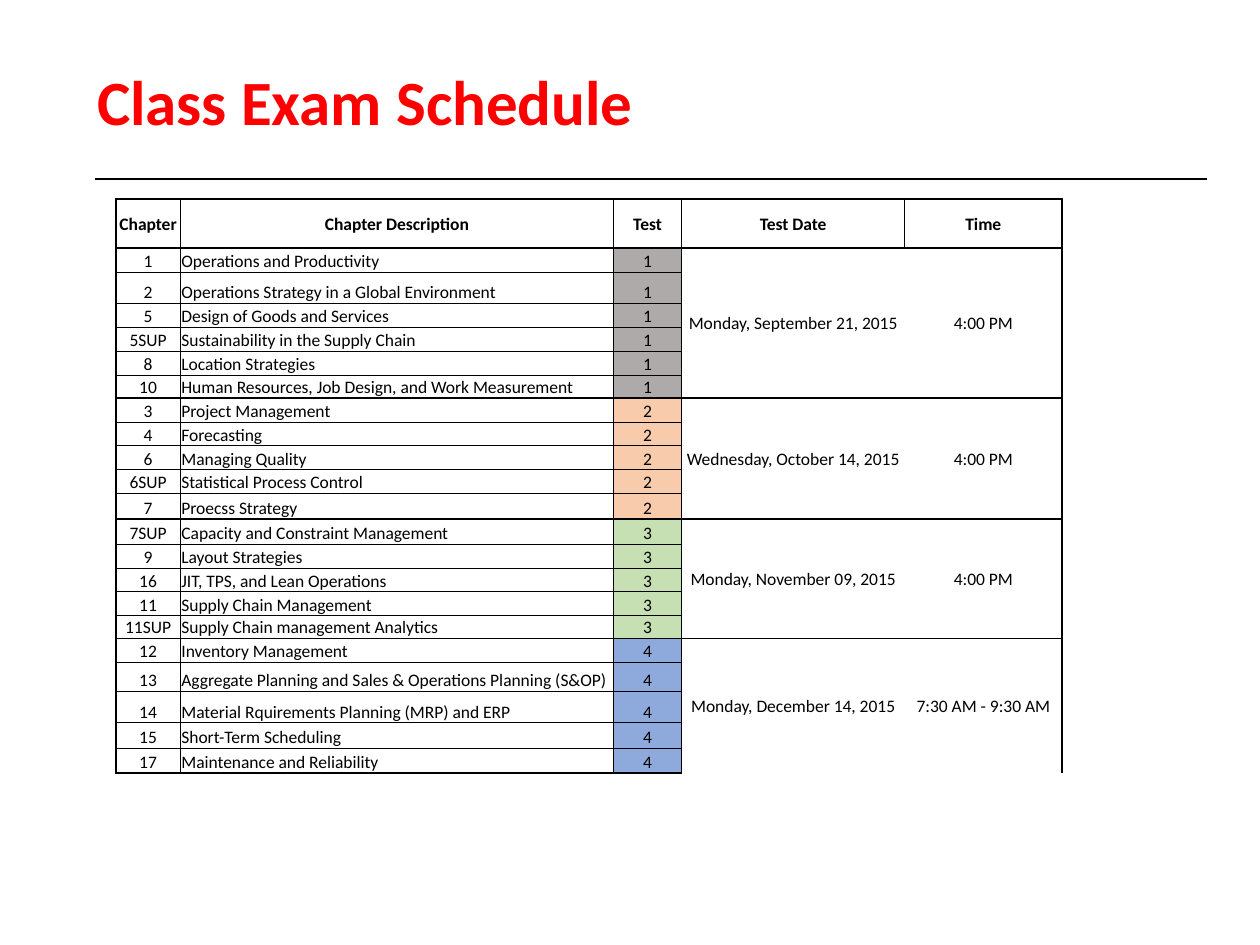
from lxml import etree
from pptx import Presentation
from pptx.dml.color import RGBColor
from pptx.enum.shapes import MSO_CONNECTOR
from pptx.enum.text import MSO_ANCHOR, PP_ALIGN
from pptx.oxml.ns import qn
from pptx.util import Inches, Pt

LEFT, CENTER = PP_ALIGN.LEFT, PP_ALIGN.CENTER
MIDDLE, BOTTOM = MSO_ANCHOR.MIDDLE, MSO_ANCHOR.BOTTOM
BLACK = RGBColor(0x00, 0x00, 0x00)
RED = RGBColor(0xFF, 0x00, 0x00)
GRAY = RGBColor(0xAE, 0xAA, 0xAA)
ORANGE = RGBColor(0xF8, 0xCB, 0xAD)
GREEN = RGBColor(0xC6, 0xE0, 0xB4)
BLUE = RGBColor(0x8E, 0xA9, 0xDB)

TITLE = "Class Exam Schedule"
HEADER = ["Chapter", "Chapter Description", "Test", "Test Date", "Time"]
# Each test: date, time, colour, then (chapter, description, row height)
TESTS = [
    ("Monday, September 21, 2015", "4:00 PM", GRAY, [
        ("1", "Operations and Productivity", 0.19),
        ("2", "Operations Strategy in a Global Environment", 0.25),
        ("5", "Design of Goods and Services", 0.19),
        ("5SUP", "Sustainability in the Supply Chain", 0.19),
        ("8", "Location Strategies", 0.19),
        ("10", "Human Resources, Job Design, and Work Measurement", 0.18),
    ]),
    ("Wednesday, October 14, 2015", "4:00 PM", ORANGE, [
        ("3", "Project Management", 0.19),
        ("4", "Forecasting", 0.19),
        ("6", "Managing Quality", 0.19),
        ("6SUP", "Statistical Process Control", 0.19),
        ("7", "Proecss Strategy", 0.2),
    ]),
    ("Monday, November 09, 2015", "4:00 PM", GREEN, [
        ("7SUP", "Capacity and Constraint Management", 0.2),
        ("9", "Layout Strategies", 0.19),
        ("16", "JIT, TPS, and Lean Operations", 0.19),
        ("11", "Supply Chain Management", 0.19),
        ("11SUP", "Supply Chain management Analytics", 0.18),
    ]),
    ("Monday, December 14, 2015", "7:30 AM - 9:30 AM", BLUE, [
        ("12", "Inventory Management", 0.19),
        ("13", "Aggregate Planning and Sales & Operations Planning (S&OP)", 0.23),
        ("14", "Material Rquirements Planning (MRP) and ERP", 0.25),
        ("15", "Short-Term Scheduling", 0.2),
        ("17", "Maintenance and Reliability", 0.2),
    ]),
]
WIDTHS = [0.51, 3.44, 0.54, 1.77, 1.25]
HEAD_HEIGHT = 0.39
MARGINS = {"margin_left": 0.01, "margin_right": 0.01,
           "margin_top": 0.01, "margin_bottom": 0}
# Vertical rule widths in points, from the left edge to the right edge
HEAD_RULES = [1, 0.5, 0.5, 1, 1, 1]
BODY_RULES = [1, 0.5, 1, 1, 0, 1]


def set_font(font, **values):
    color = values.pop("color", BLACK)
    for key, value in values.items():
        setattr(font, key, value)
    font.color.rgb = color


def set_borders(cell, left, right, top, bottom):
    """Draw the four cell edges; a width of 0 means no line."""
    props = cell._tc.get_or_add_tcPr()
    for spot, (side, width) in enumerate(zip("LRTB", (left, right, top, bottom))):
        edge = etree.Element(qn(f"a:ln{side}"), w=str(int(Pt(width))))
        props.insert(spot, edge)
        if width:
            fill = etree.SubElement(edge, qn("a:solidFill"))
            etree.SubElement(fill, qn("a:srgbClr"), val=str(BLACK))
        else:
            etree.SubElement(edge, qn("a:noFill"))


def fill_cell(cell, text, align=CENTER, anchor=MIDDLE, bold=False):
    cell.vertical_anchor = anchor
    for key, value in MARGINS.items():
        setattr(cell, key, Inches(value))
    para = cell.text_frame.paragraphs[0]
    para.alignment = align
    run = para.add_run()
    run.text = text
    set_font(run.font, name="Calibri", size=Pt(10), bold=bold)


def style_row(table, row, rules, top, bottom, color=None):
    for col in range(len(WIDTHS)):
        cell = table.cell(row, col)
        if color and col == 2:
            cell.fill.solid()
            cell.fill.fore_color.rgb = color
        else:
            cell.fill.background()
        joined = color and col > 2
        set_borders(cell, rules[col], rules[col + 1],
                    0 if joined and top < 1 else top,
                    0 if joined and bottom < 1 else bottom)


def add_schedule(slide):
    heights = [HEAD_HEIGHT] + [item[2] for test in TESTS for item in test[3]]
    table = slide.shapes.add_table(
        len(heights), len(WIDTHS), Inches(0.92), Inches(1.58),
        Inches(sum(WIDTHS)), Inches(sum(heights))).table
    table.first_row = table.horz_banding = False
    for column, width in zip(table.columns, WIDTHS):
        column.width = Inches(width)
    for line, height in zip(table.rows, heights):
        line.height = Inches(height)

    for col, text in enumerate(HEADER):
        fill_cell(table.cell(0, col), text, bold=True)
    style_row(table, 0, HEAD_RULES, 1, 1)

    row = 1
    for number, (date, time, color, items) in enumerate(TESTS, 1):
        first, last = row, row + len(items) - 1
        for chapter, topic, _ in items:
            fill_cell(table.cell(row, 0), chapter, anchor=BOTTOM)
            fill_cell(table.cell(row, 1), topic, LEFT, BOTTOM)
            fill_cell(table.cell(row, 2), str(number), anchor=BOTTOM)
            style_row(table, row, BODY_RULES, 1 if row == first else 0.5,
                      1 if row == last else 0.5, color)
            row += 1
        for col, text in ((3, date), (4, time)):
            table.cell(first, col).merge(table.cell(last, col))
            fill_cell(table.cell(first, col), text)


def add_title(slide):
    title = slide.shapes.title
    title.left, title.top = Inches(0.67), Inches(0.47)
    title.width, title.height = Inches(8.5), Inches(0.67)
    title.text_frame.vertical_anchor = BOTTOM
    para = title.text_frame.paragraphs[0]
    para.alignment, para.line_spacing = LEFT, 0.8
    run = para.add_run()
    run.text = TITLE
    set_font(run.font, name="Calibri", size=Pt(36), bold=True, color=RED)


def add_rule(slide):
    rule = slide.shapes.add_connector(
        MSO_CONNECTOR.STRAIGHT, Inches(0.75), Inches(1.42), Inches(9.58), Inches(1.42))
    rule.line.color.rgb = BLACK
    rule.line.width = Pt(0.75)
    etree.SubElement(rule._element.spPr, qn("a:effectLst"))


def main():
    deck = Presentation()
    deck.slide_width, deck.slide_height = Inches(10), Inches(7.5)
    slide = deck.slides.add_slide(deck.slide_layouts[5])
    add_rule(slide)
    add_title(slide)
    add_schedule(slide)
    deck.save("out.pptx")


if __name__ == "__main__":
    main()
